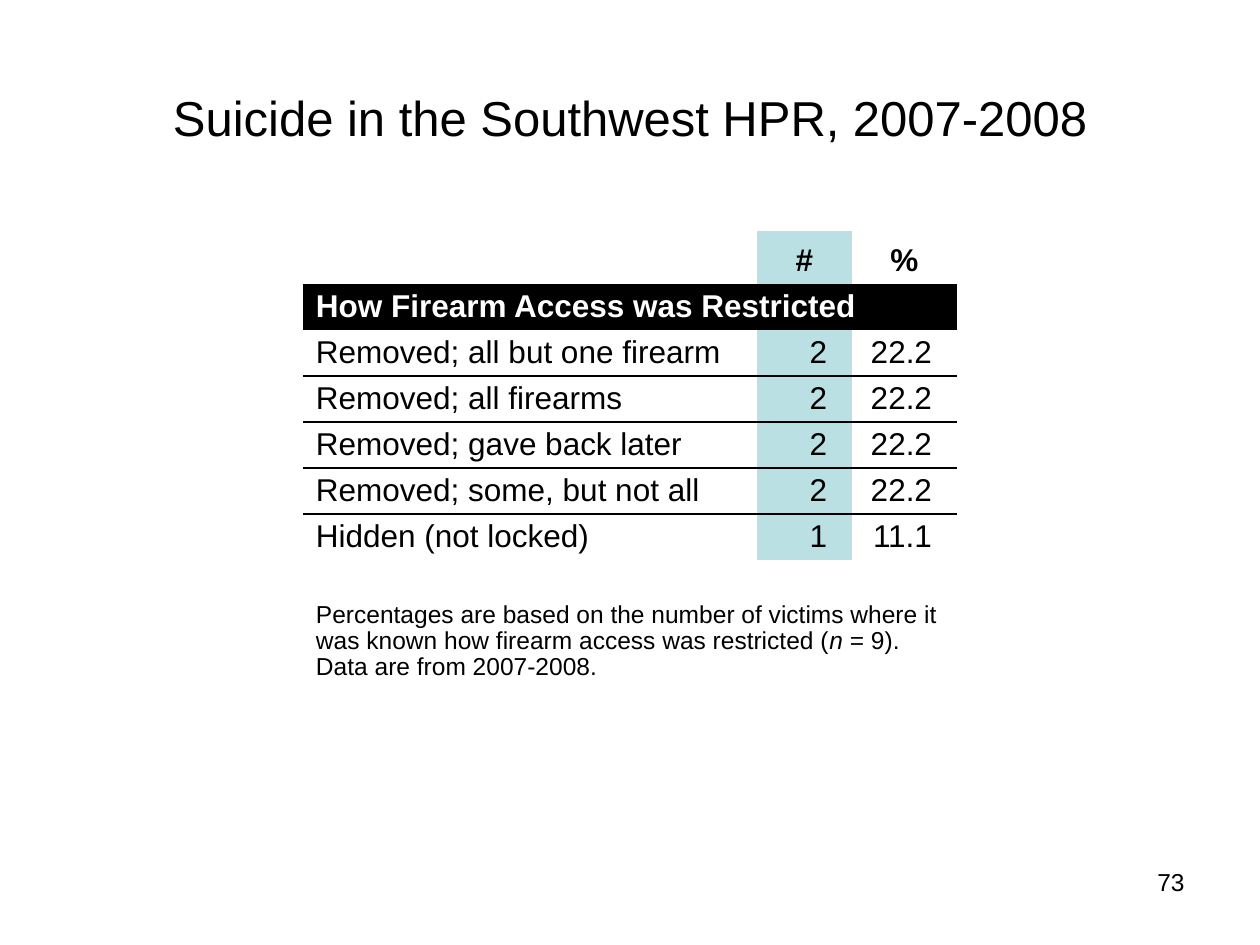
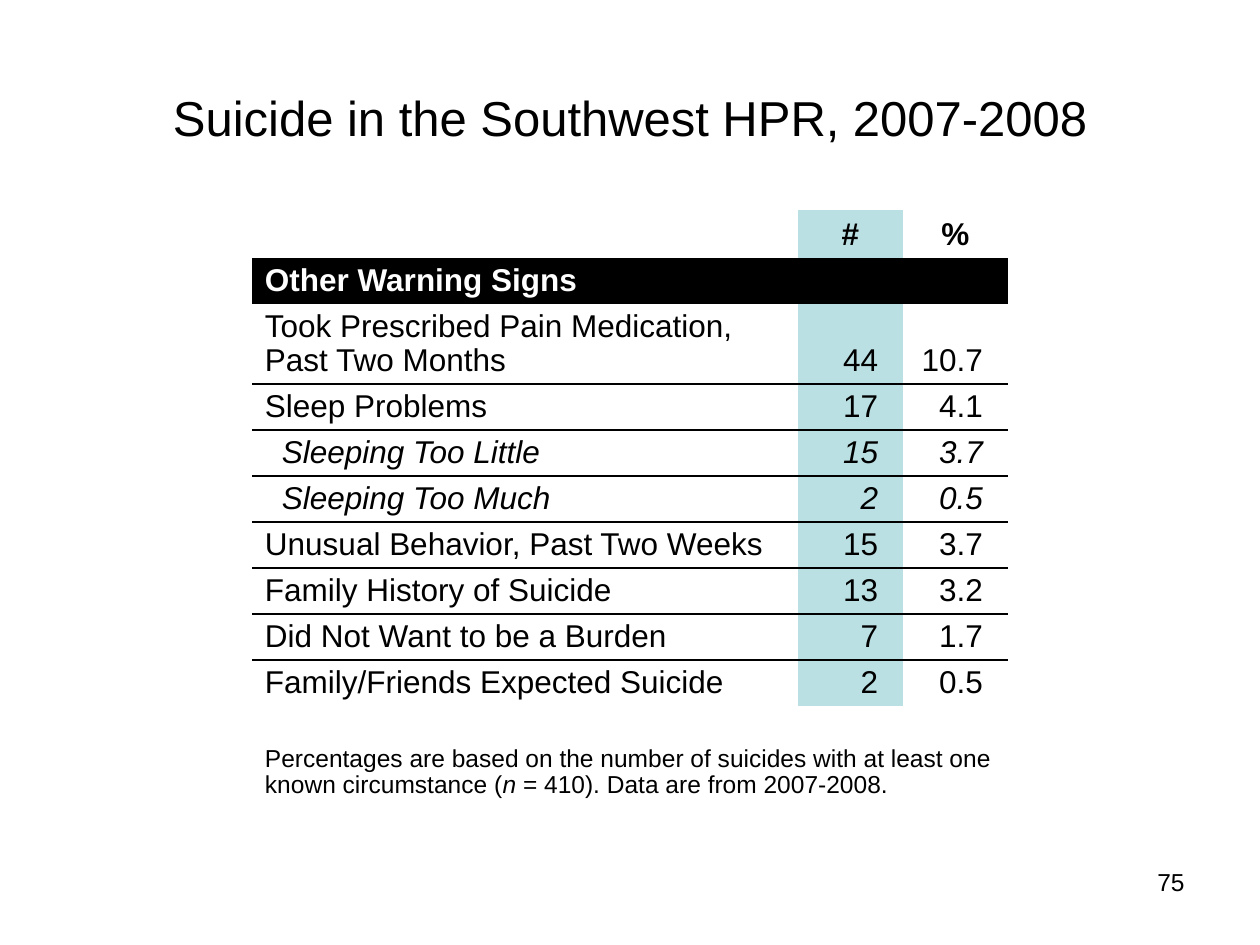
"""Build two slides of suicide statistics, each with a ruled table."""
from dataclasses import dataclass

from lxml.etree import SubElement
from pptx import Presentation
from pptx.dml.color import RGBColor
from pptx.enum.text import MSO_ANCHOR as Anchor, PP_ALIGN as Align
from pptx.oxml import parse_xml
from pptx.oxml.ns import nsdecls, qn
from pptx.util import Emu, Pt

PX = 914400 / 126


@dataclass(frozen=True)
class Theme:
    font: str = "Arial"
    ink: str = "000000"
    paper: str = "FFFFFF"
    highlight: str = "BBE0E3"
    title_size: int = 28
    body_size: int = 18
    note_size: int = 14
    line_spacing: float = 0.95
    plain_table: str = "{2D5ABB26-0587-4C30-8999-92F81FD0307C}"


THEME = Theme()
TITLE = "Suicide in the Southwest HPR, 2007-2008"
CELL_INSET, NUMBER_INSET, SUBROW_INSET = 13, 25, 30
TOP_INSET, BOTTOM_INSET = 1, 6
ROW_HEIGHT, GAP_HEIGHT, NOTE_LINE = 46, 36, 26

RESTRICTED_ACCESS = dict(
    left=303, top=231, columns=(454, 95, 105), header_height=53,
    section="How Firearm Access was Restricted",
    rows=[
        ("Removed; all but one firearm", "2", "22.2"),
        ("Removed; all firearms", "2", "22.2"),
        ("Removed; gave back later", "2", "22.2"),
        ("Removed; some, but not all", "2", "22.2"),
        ("Hidden (not locked)", "1", "11.1"),
    ],
    note=("Percentages are based on the number of victims where it was known "
          "how firearm access was restricted (", "n", " = 9). Data are from 2007-2008."),
    note_lines=3,
)
WARNING_SIGNS = dict(
    left=252, top=210, columns=(546, 105, 105), header_height=48,
    section="Other Warning Signs",
    rows=[
        ("Took Prescribed Pain Medication, Past Two Months", "44", "10.7"),
        ("Sleep Problems", "17", "4.1"),
        ("Sleeping Too Little", "15", "3.7"),
        ("Sleeping Too Much", "2", "0.5"),
        ("Unusual Behavior, Past Two Weeks", "15", "3.7"),
        ("Family History of Suicide", "13", "3.2"),
        ("Did Not Want to be a Burden", "7", "1.7"),
        ("Family/Friends Expected Suicide", "2", "0.5"),
    ],
    note=("Percentages are based on the number of suicides with at least one "
          "known circumstance (", "n", " = 410). Data are from 2007-2008."),
    note_lines=2, subrows=(2, 3), tall_rows={0: 80},
)


def px(length):
    """Turn px into EMU."""
    return Emu(round(length * PX))


def write_text(frame, text, size=THEME.body_size, color=THEME.ink, bold=False,
               italic=False, align=Align.LEFT, spacing=None):
    """Write text, or a tuple whose every second piece is italic."""
    para = frame.paragraphs[0]
    para.alignment = align
    para.line_spacing = spacing
    for index, piece in enumerate((text,) if isinstance(text, str) else text):
        span = para.add_run()
        span.text = piece
        font = span.font
        font.name, font.size, font.bold = THEME.font, Pt(size), bold
        font.italic = italic or index % 2 == 1
        font.color.rgb = RGBColor.from_string(color)


def add_label(page, text, left, top, width, height, anchor=Anchor.TOP, **style):
    """Add a wrapped text box."""
    box = page.shapes.add_textbox(px(left), px(top), px(width), px(height))
    box.text_frame.word_wrap = True
    box.text_frame.vertical_anchor = anchor
    write_text(box.text_frame, text, **style)


def fill_cell(cell, text, fill=None, left=CELL_INSET, right=CELL_INSET, **style):
    """Set the text, insets and fill of a table cell."""
    cell.vertical_anchor = Anchor.BOTTOM
    cell.margin_left, cell.margin_right = px(left), px(right)
    cell.margin_top, cell.margin_bottom = px(TOP_INSET), px(BOTTOM_INSET)
    paint_cell(cell, fill)
    if text:
        write_text(cell.text_frame, text, spacing=THEME.line_spacing, **style)


def paint_cell(cell, fill=None):
    """Fill a cell with a colour, or leave it clear."""
    if fill:
        cell.fill.solid()
        cell.fill.fore_color.rgb = RGBColor.from_string(fill)
    else:
        cell.fill.background()


def rule_below(cell):
    """Draw a thin line under a cell."""
    line = parse_xml(
        f'<a:lnB {nsdecls("a")} w="{Pt(1)}"><a:solidFill>'
        f'<a:srgbClr val="{THEME.ink}"/></a:solidFill></a:lnB>')
    cell._tc.get_or_add_tcPr().insert(0, line)


def shrink_empty_cell(cell):
    """Let an empty cell take a small row height."""
    cell.margin_top = cell.margin_bottom = 0
    SubElement(cell.text_frame.paragraphs[0]._p, qn("a:endParaRPr"), sz="800")
    paint_cell(cell)


def add_span_row(table, row, text, **style):
    """Merge a whole row and write into it."""
    last = len(table.columns) - 1
    table.cell(row, 0).merge(table.cell(row, last))
    fill_cell(table.cell(row, 0), text, **style)


def add_body_row(table, row, values, italic, ruled):
    """Write a label with its count and percentage."""
    number = dict(right=NUMBER_INSET, align=Align.RIGHT, italic=italic)
    label, count, percent = table.rows[row].cells
    fill_cell(label, values[0], left=SUBROW_INSET if italic else CELL_INSET, italic=italic)
    fill_cell(count, values[1], fill=THEME.highlight, **number)
    fill_cell(percent, values[2], **number)
    if ruled:
        for cell in (label, count, percent):
            rule_below(cell)


def add_statistics(page, left, top, columns, header_height, section, rows, note,
                   note_lines, subrows=(), tall_rows=None):
    """Add a table with headings, a section band, ruled rows and a note."""
    tall_rows = tall_rows or {}
    heights = [header_height, ROW_HEIGHT]
    heights += [tall_rows.get(index, ROW_HEIGHT) for index in range(len(rows))]
    heights += [GAP_HEIGHT, NOTE_LINE * note_lines + TOP_INSET + BOTTOM_INSET]
    frame = page.shapes.add_table(len(heights), len(columns), px(left), px(top),
                                  px(sum(columns)), px(sum(heights)))
    table = frame.table
    table.first_row = table.horz_banding = False
    table._tbl.tblPr.find(qn("a:tableStyleId")).text = THEME.plain_table
    for column, width in zip(table.columns, columns):
        column.width = px(width)
    for row, height in zip(table.rows, heights):
        row.height = px(height)

    headings = ("", None), ("#", THEME.highlight), ("%", None)
    for cell, (heading, fill) in zip(table.rows[0].cells, headings):
        fill_cell(cell, heading, fill=fill, bold=True, align=Align.CENTER)
    add_span_row(table, 1, section, fill=THEME.ink, color=THEME.paper, bold=True)
    for index, values in enumerate(rows):
        add_body_row(table, index + 2, values, index in subrows, index < len(rows) - 1)
    gap = len(rows) + 2
    for cell in table.rows[gap].cells:
        shrink_empty_cell(cell)
    add_span_row(table, gap + 1, note, size=THEME.note_size)


def add_page(deck, number, statistics):
    """Add a slide with the shared title, its table and its number."""
    page = deck.slides.add_slide(deck.slide_layouts[6])
    add_label(page, str(number), 903, 861, 294, 66,
              size=THEME.note_size, align=Align.RIGHT)
    add_label(page, TITLE, 63, 38, 1134, 158, anchor=Anchor.MIDDLE,
              size=THEME.title_size, align=Align.CENTER)
    add_statistics(page, **statistics)


def main():
    """Build and save the deck."""
    deck = Presentation()
    deck.slide_width, deck.slide_height = px(1260), px(945)
    add_page(deck, 73, RESTRICTED_ACCESS)
    add_page(deck, 75, WARNING_SIGNS)
    deck.save("out.pptx")


if __name__ == "__main__":
    main()
